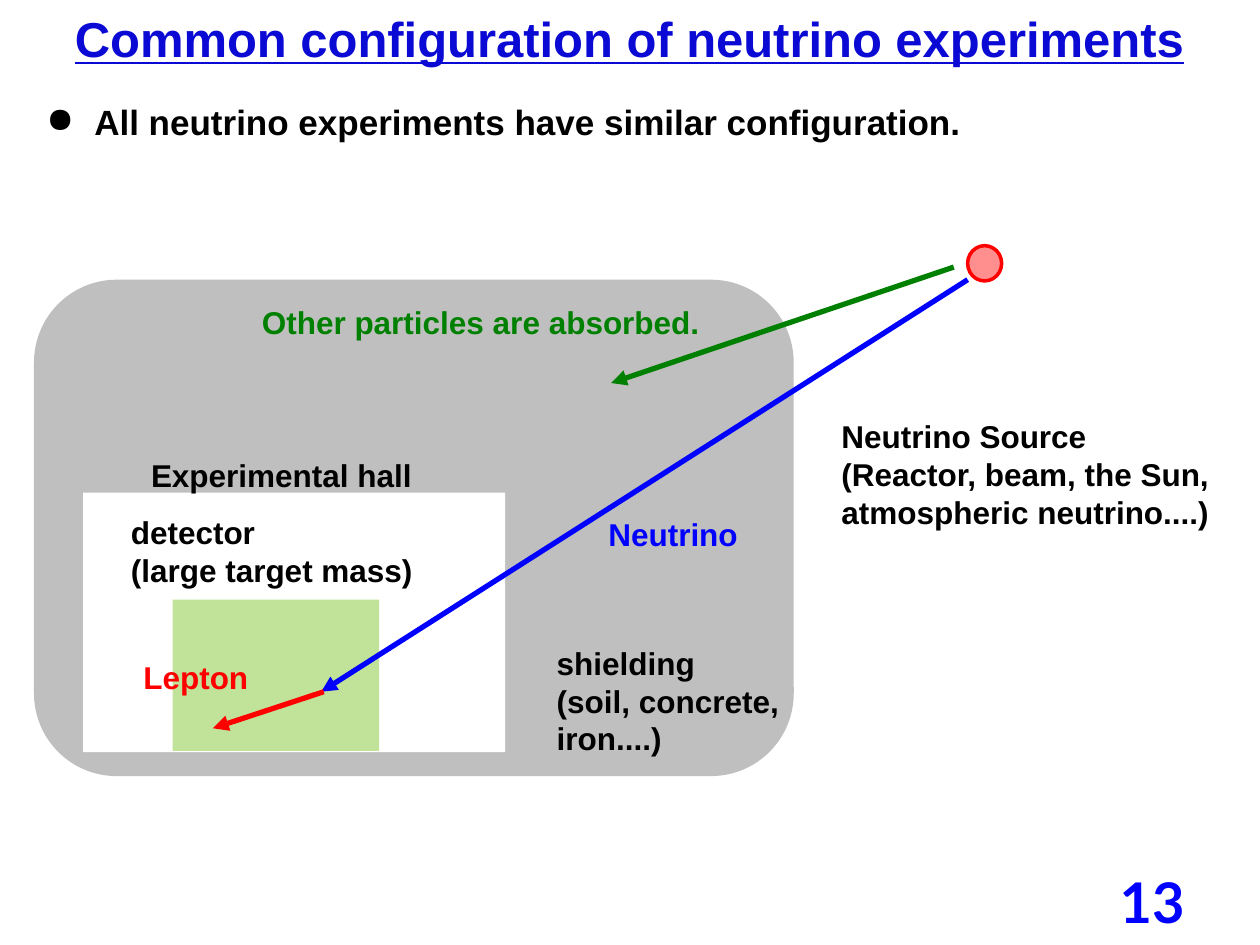
"""Build the slide on the common configuration of neutrino experiments."""
from lxml import etree
from pptx import Presentation
from pptx.dml.color import RGBColor
from pptx.enum.shapes import MSO_CONNECTOR, MSO_SHAPE as Shape
from pptx.enum.text import MSO_ANCHOR as Anchor, PP_ALIGN as Align
from pptx.oxml.ns import qn
from pptx.util import Inches, Pt

BLACK, BLUE, GREEN, RED = "000000", "0000FF", "008000", "FF0000"

TITLE = ("Common configuration of neutrino experiments", (0.27, 0.02, 9.45, 0.57))
BULLET = ("All neutrino experiments have similar configuration.", (0.27, 0.75, 9.69, 0.74))
PAGE_NUMBER = ("13", (7.17, 6.95, 2.33, 0.4))

SHAPES = [
    (Shape.ROUNDED_RECTANGLE, (0.27, 2.22, 6.03, 3.94), "BFBFBF", None),
    (Shape.OVAL, (7.68, 1.95, 0.27, 0.28), "FF8F8F", RED),
    (Shape.RECTANGLE, (0.66, 3.91, 3.35, 2.06), "FFFFFF", None),
    (Shape.RECTANGLE, (1.37, 4.76, 1.64, 1.2), "C0E399", None),
]

ARROWS = [
    ((7.68, 2.22), (2.55, 5.49), BLUE),
    ((7.57, 2.12), (4.85, 3.04), GREEN),
    ((2.57, 5.49), (1.69, 5.78), RED),
]

LABELS = [
    ("shielding\n(soil, concrete, iron....)", (4.32, 5.06, 2.76, 1.01), BLACK),
    ("Neutrino Source\n(Reactor, beam, the Sun, atmospheric neutrino....)",
     (6.58, 3.26, 3.25, 1.01), BLACK),
    ("detector\v(large target mass)", (0.94, 4.02, 2.91, 0.71), BLACK),
    ("Experimental hall", (1.1, 3.57, 2.91, 0.4), BLACK),
    ("Other particles are absorbed.", (1.98, 2.36, 3.85, 0.4), GREEN),
    ("Neutrino", (4.73, 4.04, 1.56, 0.4), BLUE),
    ("Lepton", (1.04, 5.17, 1.56, 0.4), RED),
]


def color(value):
    return RGBColor.from_string(value)


def add_shape(slide, kind, box, fill, outline):
    shape = slide.shapes.add_shape(kind, *map(Inches, box))
    shape.shadow.inherit = False
    shape.fill.solid()
    shape.fill.fore_color.rgb = color(fill)
    if outline:
        shape.line.color.rgb = color(outline)
        shape.line.width = Pt(2)
    else:
        shape.line.fill.background()


def add_arrow(slide, start, end, line_color):
    arrow = slide.shapes.add_connector(MSO_CONNECTOR.STRAIGHT, *map(Inches, start + end))
    arrow.line.color.rgb = color(line_color)
    arrow.line.width = Pt(3)
    etree.SubElement(arrow.line._get_or_add_ln(), qn("a:tailEnd"), type="triangle")
    etree.SubElement(arrow._element.spPr, qn("a:effectLst"))


def add_text(slide, text, box, text_color, size=18, font="Arial", align=Align.LEFT):
    frame = slide.shapes.add_textbox(*map(Inches, box)).text_frame
    frame.word_wrap = True
    frame.text = text
    for paragraph in frame.paragraphs:
        paragraph.alignment = align
        paragraph.font.name = font
        paragraph.font.size = Pt(size)
        paragraph.font.bold = True
        paragraph.font.color.rgb = color(text_color)
    return frame


def add_bullet(paragraph, indent):
    properties = paragraph._p.get_or_add_pPr()
    properties.set("marL", str(Inches(indent)))
    properties.set("indent", str(-Inches(indent)))
    bullet = etree.Element(qn("a:buChar"), char="●")
    properties.insert(0, bullet)


def main():
    presentation = Presentation()
    presentation.slide_width, presentation.slide_height = Inches(10), Inches(7.5)
    slide = presentation.slides.add_slide(presentation.slide_layouts[6])

    for shape in SHAPES:
        add_shape(slide, *shape)
    for arrow in ARROWS:
        add_arrow(slide, *arrow)
    for label in LABELS:
        add_text(slide, *label)

    title = add_text(slide, *TITLE, "0A0AD4", size=28, align=Align.CENTER)
    title.paragraphs[0].font.underline = True
    bullet = add_text(slide, *BULLET, BLACK, size=20)
    add_bullet(bullet.paragraphs[0], 0.38)
    number = add_text(slide, *PAGE_NUMBER, BLUE, size=32, font="Lato", align=Align.RIGHT)
    number.vertical_anchor = Anchor.MIDDLE

    presentation.save("out.pptx")


if __name__ == "__main__":
    main()
